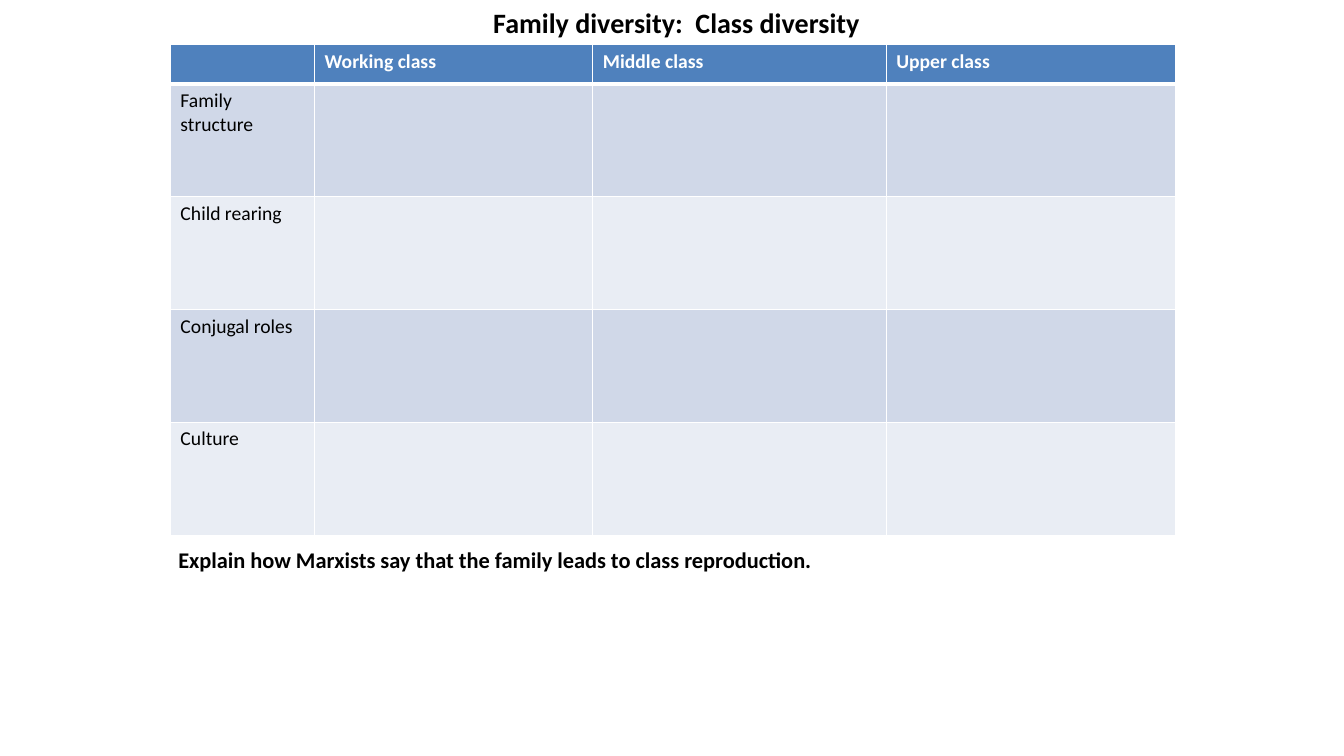
"""Build the class diversity slide: a title, a worksheet table and a closing task."""
from dataclasses import dataclass

from lxml.etree import SubElement
from pptx import Presentation
from pptx.dml.color import RGBColor
from pptx.enum.text import MSO_ANCHOR, PP_ALIGN
from pptx.oxml.ns import qn
from pptx.util import Pt

PX = 9144


@dataclass(frozen=True)
class Theme:
    font: str = "Calibri"
    ink: str = "000000"
    white: str = "FFFFFF"
    header: str = "4F81BD"
    bands: tuple = ("D0D8E8", "E9EDF4")
    title_size: int = 20
    task_size: int = 16
    cell_size: int = 14
    rule: int = 1
    header_rule: int = 3


theme = Theme()


def write(frame, text, size, color, bold, align=PP_ALIGN.LEFT):
    para = frame.paragraphs[0]
    para.text = text
    para.alignment = align
    para.font.name = theme.font
    para.font.size = Pt(size)
    para.font.bold = bold
    para.font.color.rgb = RGBColor.from_string(color)


def draw_border(cell, side, width):
    line = SubElement(cell._tc.get_or_add_tcPr(), qn(f"a:ln{side}"), w=str(Pt(width)))
    fill = SubElement(line, qn("a:solidFill"))
    SubElement(fill, qn("a:srgbClr"), val=theme.white)


deck = Presentation()
deck.slide_width = 1333 * PX
deck.slide_height = 750 * PX
page = deck.slides.add_slide(deck.slide_layouts[6])

title = page.shapes.add_textbox(221 * PX, 0, 900 * PX, 44 * PX).text_frame
title.word_wrap = True
title.vertical_anchor = MSO_ANCHOR.MIDDLE
write(title, "Family diversity:  Class diversity", theme.title_size, theme.ink, True, PP_ALIGN.CENTER)

classes = ["", "Working class", "Middle class", "Upper class"]
topics = ["Family structure", "Child rearing", "Conjugal roles", "Culture"]
rows = [classes] + [[topic, "", "", ""] for topic in topics]
column_widths = [143, 276, 291, 287]
row_heights = [39] + [112] * len(topics)

table = page.shapes.add_table(
    len(rows), len(classes), 169 * PX, 44 * PX, sum(column_widths) * PX, sum(row_heights) * PX
).table
for column, width in zip(table.columns, column_widths):
    column.width = width * PX
for row, height in zip(table.rows, row_heights):
    row.height = height * PX

for row_index, texts in enumerate(rows):
    is_header = row_index == 0
    fill_color = theme.header if is_header else theme.bands[(row_index - 1) % 2]
    text_color = theme.white if is_header else theme.ink
    top_rule = theme.header_rule if row_index == 1 else theme.rule
    bottom_rule = theme.header_rule if is_header else theme.rule
    for column_index, text in enumerate(texts):
        cell = table.cell(row_index, column_index)
        for side, width in zip("LRTB", (theme.rule, theme.rule, top_rule, bottom_rule)):
            draw_border(cell, side, width)
        cell.fill.solid()
        cell.fill.fore_color.rgb = RGBColor.from_string(fill_color)
        write(cell.text_frame, text, theme.cell_size, text_color, is_header)

task = page.shapes.add_textbox(167 * PX, 537 * PX, 890 * PX, 37 * PX).text_frame
task.word_wrap = True
write(
    task,
    "Explain how Marxists say that the family leads to class reproduction.",
    theme.task_size,
    theme.ink,
    True,
)

deck.save("out.pptx")
